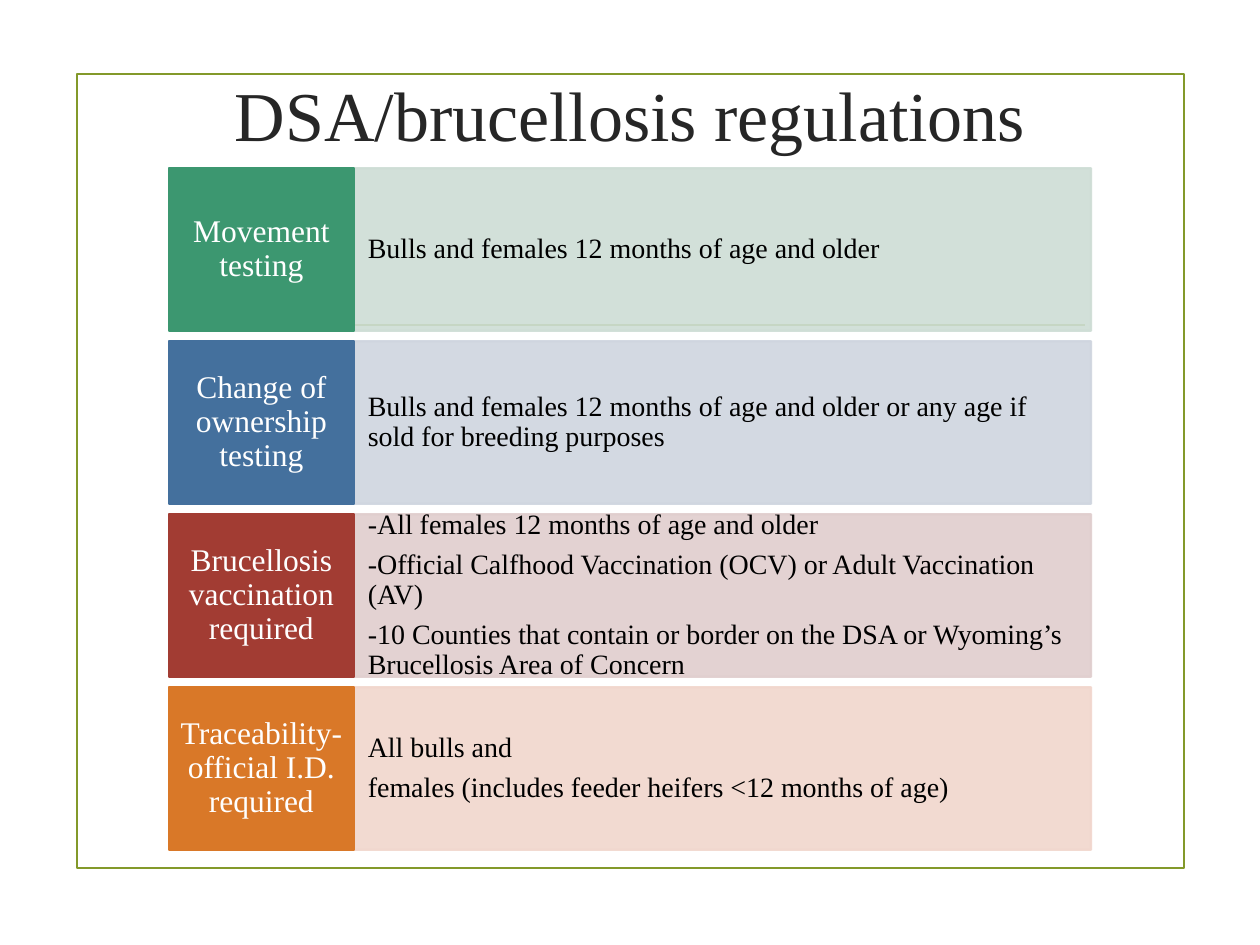
from lxml import etree
from pptx import Presentation
from pptx.dml.color import RGBColor
from pptx.enum.shapes import MSO_CONNECTOR, MSO_SHAPE
from pptx.enum.text import MSO_ANCHOR, PP_ALIGN
from pptx.oxml.ns import qn
from pptx.util import Inches, Pt

RECT = MSO_SHAPE.RECTANGLE
STRAIGHT = MSO_CONNECTOR.STRAIGHT
MIDDLE = MSO_ANCHOR.MIDDLE
LEFT, CENTER = PP_ALIGN.LEFT, PP_ALIGN.CENTER

FONT = "Times New Roman"
OLIVE = RGBColor(0x83, 0x99, 0x2A)
CHARCOAL = RGBColor(0x26, 0x26, 0x26)
BLACK = RGBColor(0x00, 0x00, 0x00)
WHITE = RGBColor(0xFF, 0xFF, 0xFF)
GREEN, PALE_GREEN = RGBColor(0x3C, 0x97, 0x70), RGBColor(0xCE, 0xDD, 0xD5)
BLUE, PALE_BLUE = RGBColor(0x44, 0x70, 0x9D), RGBColor(0xCF, 0xD5, 0xDF)
RED, PALE_RED = RGBColor(0xA2, 0x3C, 0x33), RGBColor(0xE0, 0xCE, 0xCE)
ORANGE, PALE_ORANGE = RGBColor(0xD9, 0x78, 0x28), RGBColor(0xF1, 0xD6, 0xCD)

ROW_TOP, ROW_STEP, ROW_HEIGHT = 1.335, 1.373, 1.29
LABEL_LEFT, LABEL_WIDTH = 1.34, 1.47
DETAIL_LEFT, DETAIL_WIDTH = 2.81, 5.85

REGULATIONS = [
    ("Movement testing", GREEN, PALE_GREEN,
     ["Bulls and females 12 months of age and older"]),
    ("Change of ownership testing", BLUE, PALE_BLUE,
     ["Bulls and females 12 months of age and older or any age if sold for "
      "breeding purposes"]),
    ("Brucellosis vaccination required", RED, PALE_RED,
     ["-All females 12 months of age and older",
      "-Official Calfhood Vaccination (OCV) or Adult Vaccination (AV)",
      "-10 Counties that contain or border on the DSA or Wyoming’s "
      "Brucellosis Area of Concern"]),
    ("Traceability-official I.D. required", ORANGE, PALE_ORANGE,
     ["All bulls and",
      "females (includes feeder heifers <12 months of age)"]),
]


def set_opacity(s, percent):
    """Make the solid fill and outline of a shape partly transparent."""
    for color in s._element.spPr.iter(qn("a:srgbClr")):
        etree.SubElement(color, qn("a:alpha"), val=str(percent * 1000))


def add_box(slide, left, top, width, height, line, fill=None):
    """Add a flat outlined rectangle, filled if a fill colour is given."""
    s = slide.shapes.add_shape(
        RECT, Inches(left), Inches(top), Inches(width), Inches(height))
    s.shadow.inherit = False
    if fill is None:
        s.fill.background()
    else:
        s.fill.solid()
        s.fill.fore_color.rgb = fill
    s.line.color.rgb = line
    s.line.width = Pt(1.25)
    return s


def write_text(s, lines, size, color, align, inset_x=0.1, inset_y=0.05):
    """Write one paragraph per line, centred vertically."""
    tf = s.text_frame
    tf.word_wrap = True
    tf.vertical_anchor = MIDDLE
    tf.margin_left = tf.margin_right = Inches(inset_x)
    tf.margin_top = tf.margin_bottom = Inches(inset_y)
    tf.text = "\n".join(lines)
    for p in tf.paragraphs:
        p.alignment = align
        p.font.name = FONT
        p.font.size = Pt(size)
        p.font.color.rgb = color


def set_spacing(s, after):
    """Tighten the lines of a shape and set the space after paragraphs."""
    for p in s.text_frame.paragraphs:
        p.line_spacing = 0.9
        p.space_after = Pt(after)


def add_rule(slide, left, right, y):
    """Add a thin horizontal rule."""
    line = slide.shapes.add_connector(
        STRAIGHT, Inches(left), Inches(y), Inches(right), Inches(y))
    line.line.color.rgb = OLIVE
    line.line.width = Pt(1.25)
    etree.SubElement(line._element.spPr, qn("a:effectLst"))


def add_title(slide, text):
    """Add the slide title."""
    s = slide.shapes.add_textbox(
        Inches(1.19), Inches(0.47), Inches(7.62), Inches(0.86))
    write_text(s, [text], 40, CHARCOAL, CENTER)


def add_regulation(slide, top, label, strong, pale, details):
    """Add one row: a pale detail panel and its coloured label."""
    panel = add_box(slide, DETAIL_LEFT, top, DETAIL_WIDTH, ROW_HEIGHT,
                    pale, pale)
    set_opacity(panel, 90)
    write_text(panel, details, 16, BLACK, LEFT, 0.11, 0.33)
    set_spacing(panel, 5.6)
    tag = add_box(slide, LABEL_LEFT, top, LABEL_WIDTH, ROW_HEIGHT,
                  strong, strong)
    write_text(tag, [label], 18, WHITE, CENTER, 0.08, 0.13)
    set_spacing(tag, 6.3)


def main():
    """Build the regulations slide."""
    prs = Presentation()
    prs.slide_width, prs.slide_height = Inches(10), Inches(7.5)
    slide = prs.slides.add_slide(prs.slide_layouts[6])
    add_box(slide, 0.61, 0.59, 8.79, 6.3, OLIVE)
    add_rule(slide, 1.4, 8.61, 2.58)
    add_title(slide, "DSA/brucellosis regulations")
    for i, regulation in enumerate(REGULATIONS):
        add_regulation(slide, ROW_TOP + i * ROW_STEP, *regulation)
    prs.save("out.pptx")


if __name__ == "__main__":
    main()
